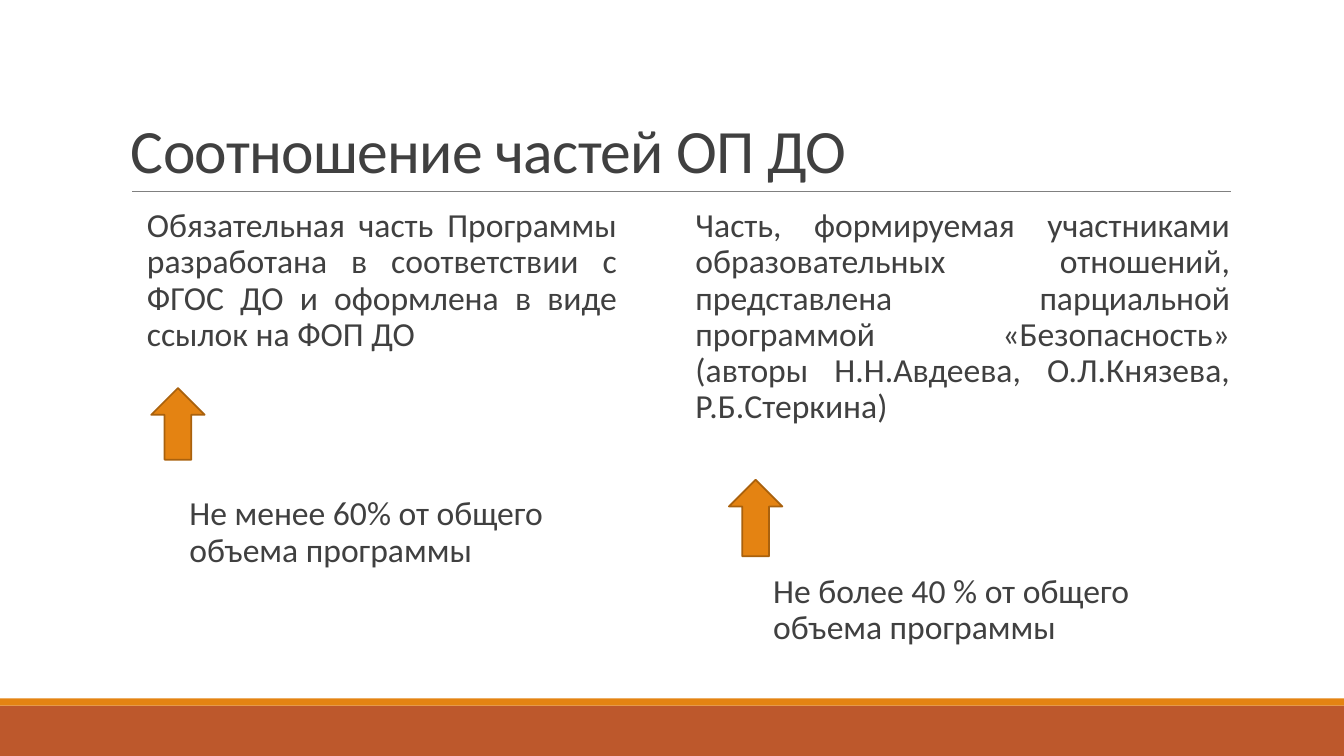
from lxml import etree
from pptx import Presentation
from pptx.dml.color import RGBColor
from pptx.enum.shapes import MSO_CONNECTOR, MSO_SHAPE
from pptx.enum.text import MSO_ANCHOR, PP_ALIGN
from pptx.oxml.ns import qn
from pptx.util import Pt

PX = 9144  # EMU per px, 100 px to the inch
WIDTH, HEIGHT = 1333, 750
COLOURS = {
    "text": "404040",
    "rule": "808080",
    "orange": "E48312",
    "arrow_edge": "A9610D",
    "rust": "BD582C",
}


class SlideBuilder:
    font = "Calibri"

    def __init__(self, slide):
        self.slide = slide

    @staticmethod
    def colour(name):
        return RGBColor.from_string(COLOURS[name])

    def block(self, preset, box, fill, edge=None):
        block = self.slide.shapes.add_shape(preset, *(n * PX for n in box))
        block.shadow.inherit = False
        block.fill.solid()
        block.fill.fore_color.rgb = self.colour(fill)
        if edge:
            block.line.color.rgb = self.colour(edge)
            block.line.width = Pt(1.25)
        else:
            block.line.fill.background()

    def rule(self, left, right, y):
        rule = self.slide.shapes.add_connector(
            MSO_CONNECTOR.STRAIGHT, left * PX, y * PX, right * PX, y * PX)
        rule.line.color.rgb = self.colour("rule")
        rule.line.width = Pt(0.5)
        etree.SubElement(rule._element.spPr, qn("a:effectLst"))

    def text(self, box, words, size=24, spacing=0.9, align=PP_ALIGN.LEFT,
             anchor=MSO_ANCHOR.TOP, right_inset=0, tracking=None):
        frame = self.slide.shapes.add_textbox(*(n * PX for n in box)).text_frame
        frame.word_wrap = True
        frame.vertical_anchor = anchor
        frame.margin_left, frame.margin_right = 10 * PX, right_inset * PX
        frame.margin_top = frame.margin_bottom = 5 * PX
        paragraph = frame.paragraphs[0]
        paragraph.alignment = align
        paragraph.line_spacing = spacing
        run = paragraph.add_run()
        run.text = words
        run.font.name = self.font
        run.font.size = Pt(size)
        run.font.color.rgb = self.colour("text")
        if tracking:
            run._r.get_or_add_rPr().set("spc", str(tracking))


def main():
    deck = Presentation()
    deck.slide_width, deck.slide_height = WIDTH * PX, HEIGHT * PX
    page = SlideBuilder(deck.slides.add_slide(deck.slide_layouts[6]))

    # Footer bands
    page.block(MSO_SHAPE.RECTANGLE, (0, 700, WIDTH, 50), "rust")
    page.block(MSO_SHAPE.RECTANGLE, (0, 693, WIDTH, 7), "orange")

    # Title and its rule
    page.rule(131, 1221, 190)
    page.text((120, 31, 1100, 159), "Соотношение частей ОП ДО", size=44,
              spacing=0.85, anchor=MSO_ANCHOR.BOTTOM, right_inset=10,
              tracking=-50)

    # Each programme part: description, arrow, share
    parts = [
        ((136, 202, 476, 183),
         "Обязательная часть Программы разработана в соответствии с ФГОС ДО "
         "и оформлена в виде ссылок на ФОП ДО",
         (150, 385, 53, 71),
         (178, 488, 417, 95), "Не менее 60% от общего объема программы"),
        ((680, 202, 540, 263),
         "Часть, формируемая участниками образовательных отношений, "
         "представлена парциальной программой «Безопасность» "
         "(авторы Н.Н.Авдеева, О.Л.Князева, Р.Б.Стеркина)",
         (723, 476, 53, 76),
         (757, 565, 417, 94), "Не более 40 % от общего объема программы"),
    ]
    for description_box, description, arrow_box, share_box, share in parts:
        page.text(description_box, description, align=PP_ALIGN.JUSTIFY)
        page.block(MSO_SHAPE.UP_ARROW, arrow_box, "orange", "arrow_edge")
        page.text(share_box, share)

    deck.save("out.pptx")


if __name__ == "__main__":
    main()
